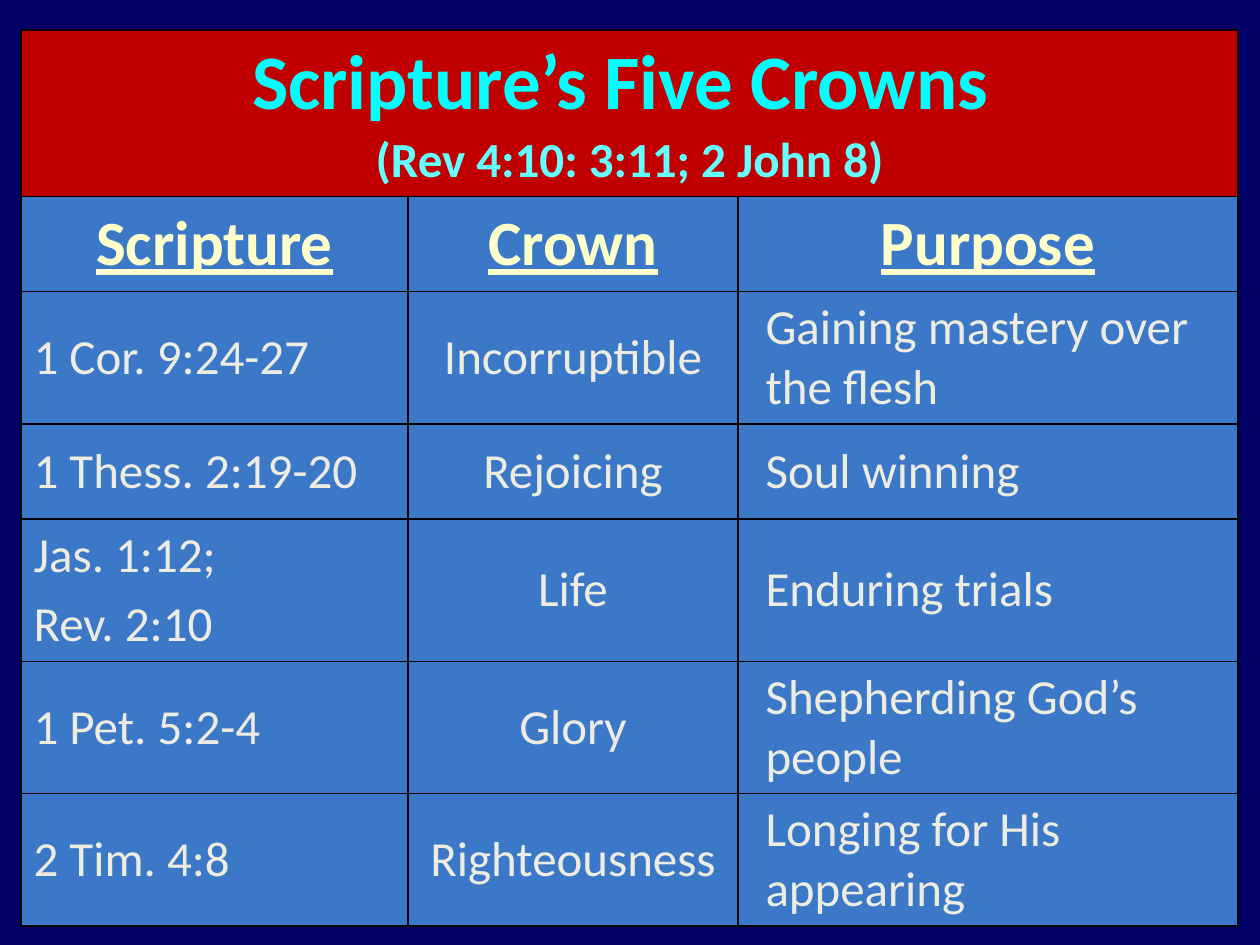
from dataclasses import dataclass

from lxml import etree
from pptx import Presentation
from pptx.dml.color import RGBColor
from pptx.enum.text import MSO_ANCHOR, PP_ALIGN
from pptx.oxml.ns import qn
from pptx.util import Pt

LEFT, CENTER = PP_ALIGN.LEFT, PP_ALIGN.CENTER
MIDDLE = MSO_ANCHOR.MIDDLE
PX = 914400 // 126  # EMU per px
BLANK_LAYOUT = 6


@dataclass(frozen=True)
class Theme:
    font: str = "Calibri"
    background: str = "000066"
    banner: str = "C00000"
    cell: str = "3B79C8"
    border: str = "000000"
    title: str = "00FFFF"
    subtitle: str = "66FFFF"
    heading: str = "FFFFCC"
    body: str = "EEECE1"
    title_size: int = 44
    heading_size: int = 36
    body_size: int = 28
    border_width: int = 1
    space_before: float = 0.2  # share of the type size


class CrownsSlide:
    def __init__(self, prs, theme):
        self.theme = theme
        self.slide = prs.slides.add_slide(prs.slide_layouts[BLANK_LAYOUT])
        fill = self.slide.background.fill
        fill.solid()
        fill.fore_color.rgb = RGBColor.from_string(theme.background)

    def table(self, left, top, widths, heights):
        frame = self.slide.shapes.add_table(
            len(heights), len(widths), left * PX, top * PX,
            sum(widths) * PX, sum(heights) * PX)
        table = frame.table
        for column, width in zip(table.columns, widths):
            column.width = width * PX
        for row, height in zip(table.rows, heights):
            row.height = height * PX
        for cell in table.iter_cells():
            self.box(cell, self.theme.cell)
        return table

    def box(self, cell, color):
        """Border all four sides, fill the cell and centre it vertically."""
        props = cell._tc.get_or_add_tcPr()
        for side in ("a:lnL", "a:lnR", "a:lnT", "a:lnB"):
            line = etree.SubElement(props, qn(side), w=str(Pt(self.theme.border_width)))
            solid = etree.SubElement(line, qn("a:solidFill"))
            etree.SubElement(solid, qn("a:srgbClr"), val=self.theme.border)
        self.fill(cell, color)
        cell.vertical_anchor = MIDDLE

    def fill(self, cell, color):
        cell.fill.solid()
        cell.fill.fore_color.rgb = RGBColor.from_string(color)

    def style(self, font, size, color, bold, underline=False):
        font.name = self.theme.font
        font.size = Pt(size)
        font.bold = bold
        font.underline = underline
        font.color.rgb = RGBColor.from_string(color)

    def banner(self, table, title, subtitle):
        cell = table.cell(0, 0)
        cell.merge(table.cell(0, len(table.columns) - 1))
        self.fill(cell, self.theme.banner)
        paragraph = cell.text_frame.paragraphs[0]
        paragraph.alignment = CENTER
        title_run = paragraph.add_run()
        title_run.text = title
        paragraph.add_line_break()
        subtitle_run = paragraph.add_run()
        subtitle_run.text = subtitle
        self.style(title_run.font, self.theme.title_size, self.theme.title, True)
        self.style(subtitle_run.font, self.theme.body_size, self.theme.subtitle, True)

    def text(self, cell, text, size, color, align, indent=0, heading=False):
        cell.text_frame.text = text
        for paragraph in cell.text_frame.paragraphs:
            paragraph.alignment = align
            paragraph.space_before = Pt(size * self.theme.space_before)
            if indent:
                props = paragraph._p.get_or_add_pPr()
                props.set("marL", str(indent * PX))
                props.set("indent", "0")
            self.style(paragraph.font, size, color, heading, heading)


HEADINGS = ("Scripture", "Crown", "Purpose")
CROWNS = (
    ("1 Cor. 9:24-27", "Incorruptible", "Gaining mastery over the flesh"),
    ("1 Thess. 2:19-20", "Rejoicing", "Soul winning"),
    ("Jas. 1:12;\nRev. 2:10", "Life", "Enduring trials"),
    ("1 Pet. 5:2-4", "Glory", "Shepherding God’s people"),
    ("2 Tim. 4:8", "Righteousness", "Longing for His appearing"),
)
COLUMN_LAYOUT = ((LEFT, 0), (CENTER, 0), (LEFT, 15))  # alignment, indent in px


def main():
    theme = Theme()
    prs = Presentation()
    prs.slide_width, prs.slide_height = 1260 * PX, 945 * PX
    page = CrownsSlide(prs, theme)

    # Grid and title banner
    table = page.table(21, 30, (387, 330, 500), (164, 95, 130, 95, 142, 130, 130))
    page.banner(table, "Scripture’s Five Crowns ", "(Rev 4:10: 3:11; 2 John 8)")

    # Column headings
    for col, heading in enumerate(HEADINGS):
        page.text(table.cell(1, col), heading, theme.heading_size, theme.heading,
                  CENTER, heading=True)

    # One row per crown
    for row, crown in enumerate(CROWNS, start=2):
        for col, (entry, (align, indent)) in enumerate(zip(crown, COLUMN_LAYOUT)):
            page.text(table.cell(row, col), entry, theme.body_size, theme.body,
                      align, indent)

    prs.save("out.pptx")


if __name__ == "__main__":
    main()
